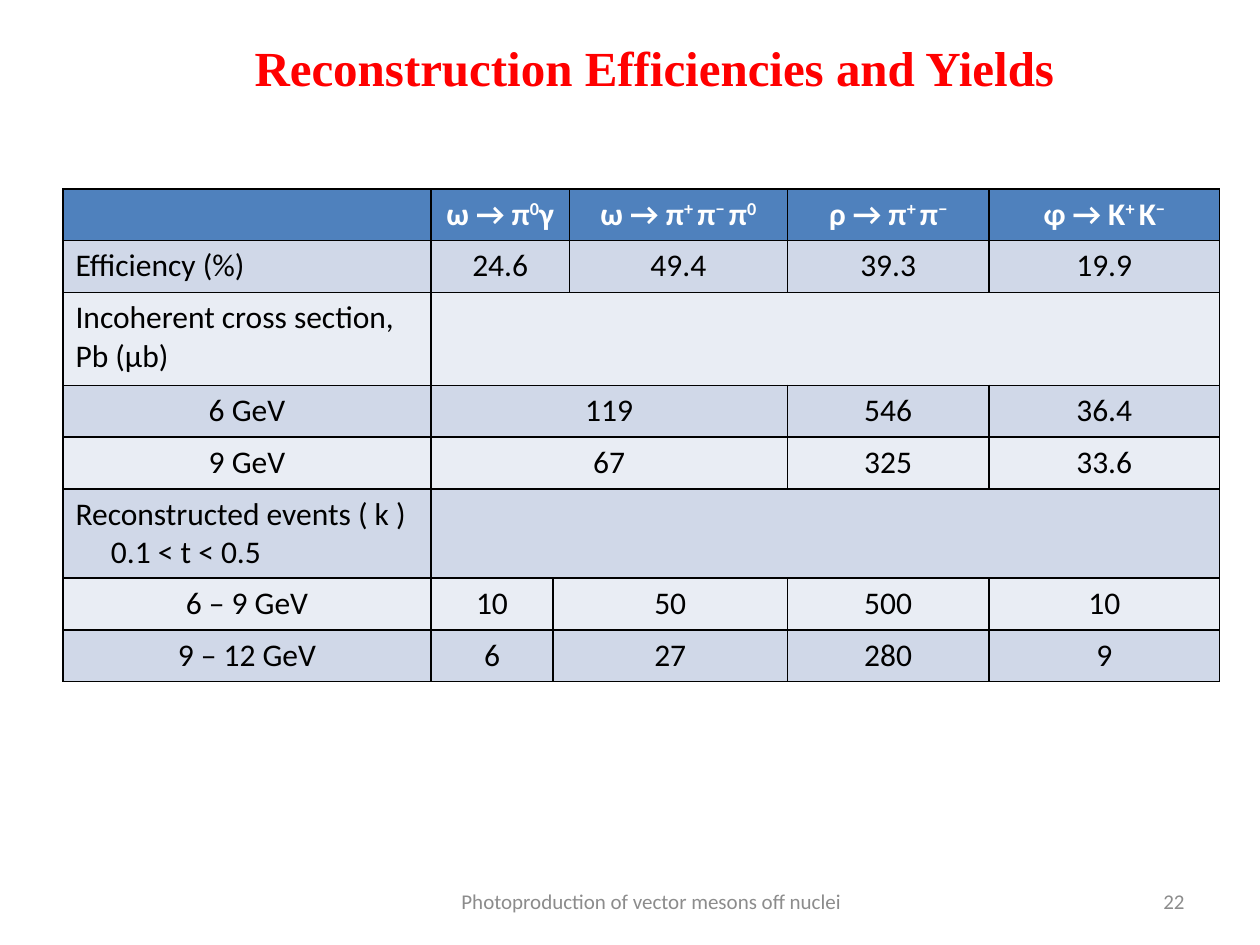
import pptx
import pptx.util
import pptx.dml.color
import pptx.enum.text
import pptx.oxml.ns
from lxml import etree

Inches, Pt = pptx.util.Inches, pptx.util.Pt
RGBColor = pptx.dml.color.RGBColor
Align = pptx.enum.text.PP_ALIGN
Anchor = pptx.enum.text.MSO_ANCHOR
Fit = pptx.enum.text.MSO_AUTO_SIZE
qn = pptx.oxml.ns.qn

BLACK = RGBColor(0, 0, 0)
WHITE = RGBColor(255, 255, 255)
RED = RGBColor(255, 0, 0)
GRAY = RGBColor(0x8C, 0x8C, 0x8C)
BLUE = RGBColor(0x4F, 0x81, 0xBD)
BANDS = RGBColor(0xE9, 0xED, 0xF4), RGBColor(0xD0, 0xD8, 0xE8)

# Content: each row maps a start column to its text, and a cell reaches to the
# next start; "|" switches superscript on and off
TITLE = "Reconstruction Efficiencies and Yields"
ROWS = [
    {0: "", 1: "ω → π|0|γ", 3: "ω → π|+ |π|− |π|0", 4: "ρ → π|+ |π|−", 5: "φ → K|+ |K|−"},
    {0: "Efficiency (%)", 1: "24.6", 3: "49.4", 4: "39.3", 5: "19.9"},
    {0: "Incoherent cross section, Pb (μb)", 1: ""},
    {0: "6 GeV", 1: "119", 4: "546", 5: "36.4"},
    {0: "9 GeV", 1: "67", 4: "325", 5: "33.6"},
    {0: "Reconstructed events ( k )\n0.1 < t < 0.5", 1: ""},
    {0: "6 – 9 GeV", 1: "10", 2: "50", 4: "500", 5: "10"},
    {0: "9 – 12 GeV", 1: "6", 2: "27", 4: "280", 5: "9"},
]
LEFT = {1, 2, 5}  # rows whose first cell is left aligned
WIDTHS = [2.92, 0.97, 0.13, 1.73, 1.6, 1.83]
HIGHS = [0.41, 0.41, 0.74, 0.41, 0.41, 0.71, 0.41, 0.41]
FEET = [
    ("Photoproduction of vector mesons off nuclei", 3.42, 3.5, Align.CENTER),
    ("22", 7.17, 2.33, Align.RIGHT),
]


def style(font, size, color, bold=False, name="Calibri"):
    font.size, font.bold, font.name = Pt(size), bold, name
    font.color.rgb = color


def place(shape, left, top, width, height):
    shape.left, shape.top = Inches(left), Inches(top)
    shape.width, shape.height = Inches(width), Inches(height)


def border(cell):
    props = cell._tc.get_or_add_tcPr()
    for spot, tag in enumerate(("a:lnL", "a:lnR", "a:lnT", "a:lnB")):
        line = etree.Element(qn(tag), w=str(Pt(1)))
        fill = etree.SubElement(line, qn("a:solidFill"))
        etree.SubElement(fill, qn("a:srgbClr"), val=str(BLACK))
        props.insert(spot, line)


def write(cell, text, align, color, bold):
    frame = cell.text_frame
    for i, line in enumerate(text.split("\n")):
        para = frame.add_paragraph() if i else frame.paragraphs[0]
        para.alignment = align
        if i:
            para._p.get_or_add_pPr().set("marL", str(Inches(0.28)))
        style(para.font, 18, color, bold)
        for j, part in enumerate(line.split("|")):
            run = para.add_run()
            run.text = part
            style(run.font, 18, color, bold)
            if j % 2:
                run._r.get_or_add_rPr().set("baseline", "30000")


deck = pptx.Presentation()
deck.slide_width, deck.slide_height = Inches(10), Inches(7.5)
slide = deck.slides.add_slide(deck.slide_layouts[5])

# Title
title = slide.shapes.title
place(title, 1.92, 0.25, 6.62, 0.57)
frame = title.text_frame
frame.text = TITLE
frame.word_wrap = False
frame.auto_size = Fit.SHAPE_TO_FIT_TEXT
frame.vertical_anchor = Anchor.TOP
frame.paragraphs[0].alignment = Align.LEFT
style(frame.paragraphs[0].font, 28, RED, True, "Times New Roman")

# Table
table = slide.shapes.add_table(
    len(ROWS), len(WIDTHS), Inches(0.5), Inches(1.5),
    Inches(sum(WIDTHS)), Inches(sum(HIGHS))).table
for col, width in zip(table.columns, WIDTHS):
    col.width = Inches(width)
for r, row in enumerate(ROWS):
    table.rows[r].height = Inches(HIGHS[r])
    for c in range(len(WIDTHS)):
        cell = table.cell(r, c)
        cell.fill.solid()
        cell.fill.fore_color.rgb = BANDS[r % 2] if r else BLUE
        border(cell)
    starts = list(row)
    for c, end in zip(starts, starts[1:] + [len(WIDTHS)]):
        cell = table.cell(r, c)
        if end - c > 1:
            cell.merge(table.cell(r, end - 1))
        align = Align.LEFT if c == 0 and r in LEFT else Align.CENTER
        write(cell, row[c], align, BLACK if r else WHITE, r == 0)

# Footer and page number
for text, left, width, align in FEET:
    box = slide.shapes.add_textbox(
        Inches(left), Inches(6.95), Inches(width), Inches(0.4))
    frame = box.text_frame
    frame.text = text
    frame.word_wrap = True
    frame.vertical_anchor = Anchor.MIDDLE
    frame.paragraphs[0].alignment = align
    style(frame.paragraphs[0].font, 12, GRAY)

deck.save("out.pptx")
